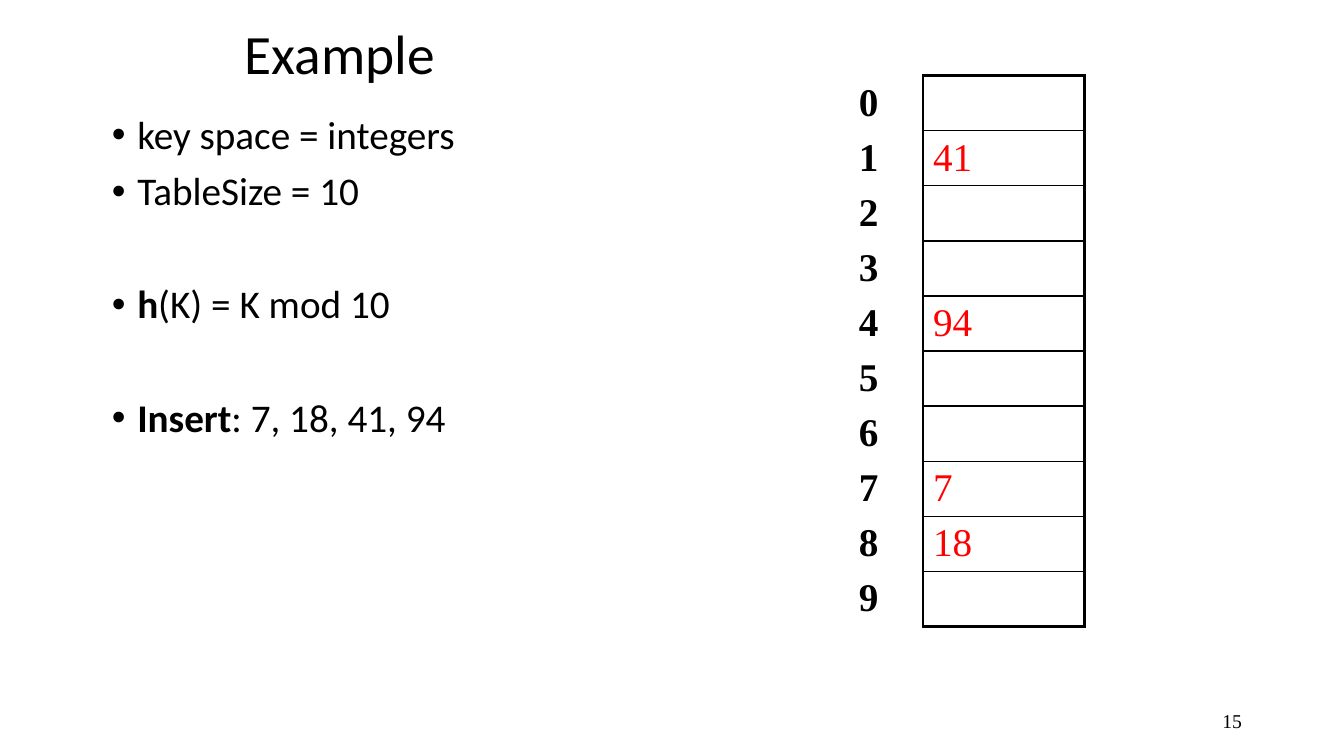
from lxml.etree import SubElement
from pptx import Presentation
from pptx.dml.color import RGBColor
from pptx.enum.text import MSO_ANCHOR as Anchor, PP_ALIGN as Align
from pptx.oxml.ns import qn
from pptx.util import Cm, Pt

BLACK = RGBColor(0, 0, 0)
RED = RGBColor(255, 0, 0)
SANS = "Calibri"
SERIF = "Times New Roman"

TABLE_SIZE = 10
KEYS = [7, 18, 41, 94]
THIN, THICK = Pt(1), Pt(2.25)

# Each bullet: bold lead, plain rest, space before in points
BULLETS = [
    ("", "key space = integers", 10),
    ("", f"TableSize = {TABLE_SIZE}", 10),
    ("h", f"(K) = K mod {TABLE_SIZE}", 50.5),
    ("Insert", ": " + ", ".join(map(str, KEYS)), 50.5),
]


def apply_format(target, values):
    for name, value in values.items():
        setattr(target, name, value)


def add_span(para, text, name, size, color=BLACK, bold=False):
    span = para.add_run()
    span.text = text
    apply_format(span.font, {"name": name, "size": Pt(size), "bold": bold})
    span.font.color.rgb = color


def add_text_frame(page, left, top, width, height, anchor):
    box = page.shapes.add_textbox(Cm(left), Cm(top), Cm(width), Cm(height))
    apply_format(box.text_frame, {"word_wrap": True, "vertical_anchor": anchor})
    return box.text_frame


def set_bullet(para):
    props = para._p.get_or_add_pPr()
    props.set("marL", str(Cm(0.64)))
    props.set("indent", str(-Cm(0.64)))
    SubElement(props, qn("a:buFont"), typeface="Arial")
    SubElement(props, qn("a:buChar"), char="•")


def add_bullets(page):
    frame = add_text_frame(page, 2.57, 2.79, 18.82, 12.6, Anchor.TOP)
    for number, (lead, rest, gap) in enumerate(BULLETS):
        para = frame.add_paragraph() if number else frame.paragraphs[0]
        apply_format(para, {"line_spacing": 0.9, "space_before": Pt(gap)})
        set_bullet(para)
        if lead:
            add_span(para, lead, SANS, 28, bold=True)
        add_span(para, rest, SANS, 28)


def set_borders(cell, **widths):
    props = cell._tc.get_or_add_tcPr()
    for side in "LRTB":
        if side in widths:
            line = SubElement(props, qn(f"a:ln{side}"), w=str(widths[side]))
            fill = SubElement(line, qn("a:solidFill"))
            SubElement(fill, qn("a:srgbClr"), val=str(BLACK))


def fill_cell(cell, text, color, bold):
    cell.fill.background()
    apply_format(cell, {
        "vertical_anchor": Anchor.MIDDLE,
        "margin_top": Cm(0.1),
        "margin_bottom": Cm(0.1),
    })
    if text:
        add_span(cell.text_frame.paragraphs[0], text, SERIF, 28, color, bold)


def add_hash_table(page):
    row_height = Cm(1.35)
    frame = page.shapes.add_table(TABLE_SIZE, 2, Cm(21.39), Cm(1.91),
                                  Cm(5.94), row_height * TABLE_SIZE)
    table = frame.table
    apply_format(table, {"first_row": False, "horz_banding": False})
    for column, width in zip(table.columns, (1.87, 4.07)):
        column.width = Cm(width)

    # Every key sits in the row given by the hash function
    slots = {key % TABLE_SIZE: str(key) for key in KEYS}
    last = TABLE_SIZE - 1
    for index in range(TABLE_SIZE):
        table.rows[index].height = row_height
        label, slot = table.cell(index, 0), table.cell(index, 1)
        set_borders(label, R=THIN)
        set_borders(slot, L=THIN, R=THICK,
                    T=THICK if index == 0 else THIN,
                    B=THICK if index == last else THIN)
        fill_cell(label, str(index), BLACK, True)
        fill_cell(slot, slots.get(index, ""), RED, False)


def main():
    deck = Presentation()
    apply_format(deck, {"slide_width": Cm(33.87), "slide_height": Cm(19.05)})
    page = deck.slides.add_slide(deck.slide_layouts[6])

    # Slide number
    number = add_text_frame(page, 23.93, 17.65, 7.62, 1.02, Anchor.MIDDLE)
    number.paragraphs[0].alignment = Align.RIGHT
    add_span(number.paragraphs[0], "15", SERIF, 14)

    # Title
    title = add_text_frame(page, 5.92, 0.48, 21.59, 1.91, Anchor.MIDDLE)
    title.paragraphs[0].line_spacing = 0.9
    add_span(title.paragraphs[0], "Example", SANS, 39.6)

    # Content
    add_bullets(page)
    add_hash_table(page)
    deck.save("out.pptx")


if __name__ == "__main__":
    main()
